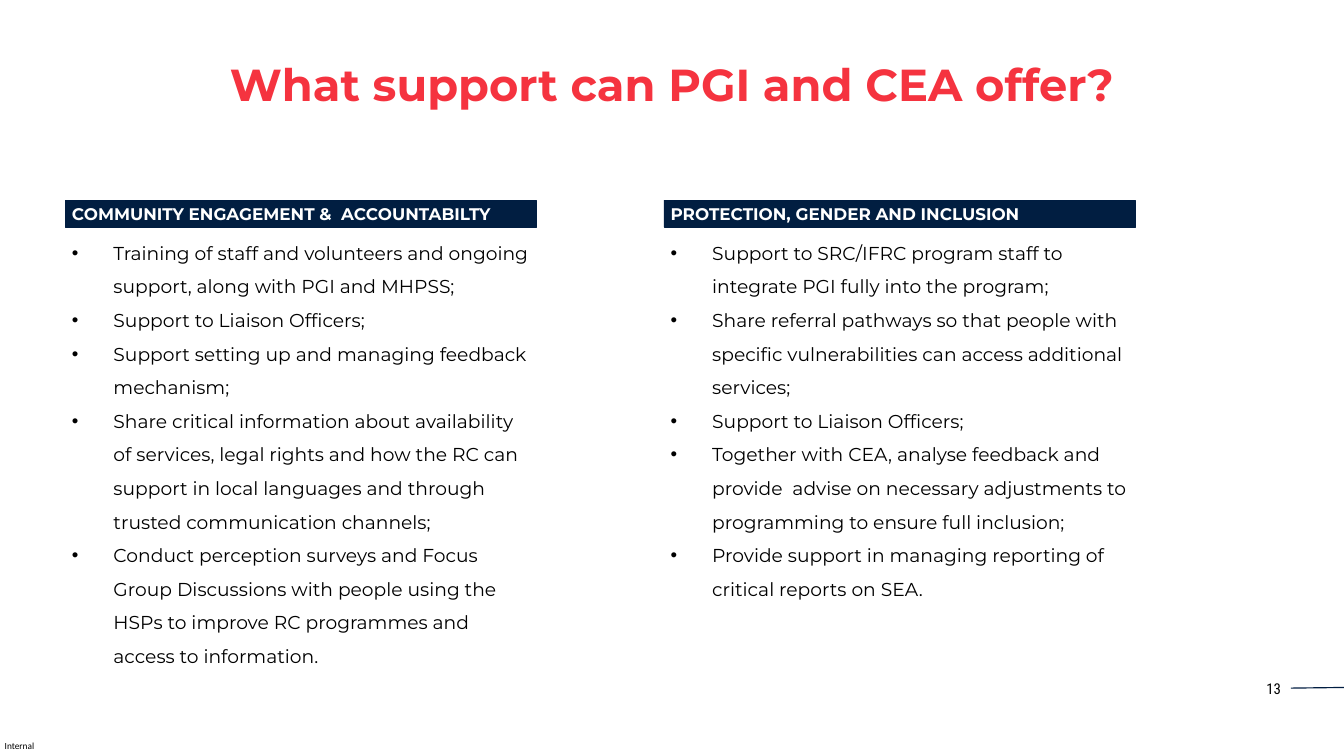
from lxml import etree
from pptx import Presentation
from pptx.dml.color import RGBColor
from pptx.enum.shapes import MSO_CONNECTOR, MSO_SHAPE
from pptx.enum.text import MSO_ANCHOR, PP_ALIGN
from pptx.oxml.ns import qn
from pptx.util import Pt

RECTANGLE = MSO_SHAPE.RECTANGLE
STRAIGHT = MSO_CONNECTOR.STRAIGHT
TOP, MIDDLE = MSO_ANCHOR.TOP, MSO_ANCHOR.MIDDLE
LEFT, CENTER, RIGHT = PP_ALIGN.LEFT, PP_ALIGN.CENTER, PP_ALIGN.RIGHT

# Content
TITLE = "What support can PGI and CEA offer?"
PAGE_NUMBER = "13"
CLASSIFICATION = "Internal"
COLUMNS = [
    ("COMMUNITY ENGAGEMENT &  ACCOUNTABILTY", [
        "Training of staff and volunteers and ongoing support, along with PGI and MHPSS;",
        "Support to Liaison Officers;",
        "Support setting up and managing feedback mechanism;",
        "Share critical information about availability of services, legal rights and how "
        "the RC can support in local languages and through trusted communication channels;",
        "Conduct perception surveys and Focus Group Discussions with people using the "
        "HSPs to improve RC programmes and access to information.",
    ]),
    ("PROTECTION, GENDER AND INCLUSION", [
        "Support to SRC/IFRC program staff to integrate PGI fully into the program;",
        "Share referral pathways so that people with specific vulnerabilities can access "
        "additional services;",
        "Support to Liaison Officers;",
        "Together with CEA, analyse feedback and provide  advise on necessary "
        "adjustments to programming to ensure full inclusion;",
        "Provide support in managing reporting of critical reports on SEA.",
    ]),
]

# Layout, in px at 100 px to the inch
PX = 9144
SLIDE_W, SLIDE_H = 2000, 1125
COLUMN_X, COLUMN_STEP, COLUMN_W = 97, 891, 701
HEADER_Y, HEADER_H = 298, 40
LIST_Y = HEADER_Y + HEADER_H
LINE_H = 50
INDENT = 62

HEADING_FONT = "Montserrat"
NAVY, NAVY_LINE, RED = "011E41", "001D41", "F5333F"
BLACK, WHITE = "000000", "FFFFFF"


def px(length):
    return length * PX


def rgb(value):
    return RGBColor.from_string(value)


def write(shape, lines, size, color, font=HEADING_FONT, bold=False,
          align=LEFT, anchor=TOP, bulleted=False):
    frame = shape.text_frame
    frame.word_wrap = True
    frame.vertical_anchor = anchor
    for i, line in enumerate(lines):
        paragraph = frame.paragraphs[0] if i == 0 else frame.add_paragraph()
        paragraph.text = line
        paragraph.alignment = align
        if bulleted:
            paragraph.line_spacing = 1.5
            add_bullet(paragraph)
        paragraph.font.name = font
        paragraph.font.size = Pt(size)
        paragraph.font.bold = bold
        paragraph.font.color.rgb = rgb(color)
    return frame


def add_bullet(paragraph):
    props = paragraph._p.get_or_add_pPr()
    props.set("marL", str(px(INDENT)))
    props.set("indent", str(-px(INDENT)))
    etree.SubElement(props, qn("a:buFont"), typeface="Arial")
    etree.SubElement(props, qn("a:buChar"), char="•")


def add_text(slide, box, lines, size, color, **style):
    return write(slide.shapes.add_textbox(*map(px, box)), lines, size, color, **style)


def add_column(slide, x, heading, points):
    list_h = 703 if len(points[3]) > 130 else 560
    add_text(slide, (x, LIST_Y, COLUMN_W, list_h), points, 20, BLACK, bulleted=True)
    header = slide.shapes.add_shape(
        RECTANGLE, *map(px, (x, HEADER_Y, COLUMN_W, HEADER_H)))
    header.shadow.inherit = False
    header.fill.solid()
    header.fill.fore_color.rgb = rgb(NAVY)
    header.line.color.rgb = rgb(NAVY_LINE)
    header.line.width = Pt(0.75)
    write(header, [heading], 18, WHITE, bold=True, anchor=MIDDLE)


def main():
    deck = Presentation()
    deck.slide_width, deck.slide_height = px(SLIDE_W), px(SLIDE_H)
    slide = deck.slides.add_slide(deck.slide_layouts[6])

    # Footer: classification, page number and rule
    label = add_text(slide, (7, 1102, 47, 17), [CLASSIFICATION], 10, BLACK, font="Calibri")
    label.margin_left = label.margin_right = label.margin_top = label.margin_bottom = 0
    add_text(slide, (1844, 1006, 72, 37), [PAGE_NUMBER], 16, BLACK,
             font="Roboto Condensed", align=RIGHT)
    rule = slide.shapes.add_connector(STRAIGHT, *map(px, (1921, 1024, SLIDE_W, 1023)))
    rule.line.color.rgb = rgb(NAVY_LINE)
    rule.line.width = Pt(1.25)
    etree.SubElement(rule._element.spPr, qn("a:effectLst"))

    # Title
    add_text(slide, (0, 80, SLIDE_W, 91), [TITLE], 48, RED, bold=True, align=CENTER)

    # Two columns of support
    for i, (heading, points) in enumerate(COLUMNS):
        add_column(slide, COLUMN_X + i * COLUMN_STEP, heading, points)

    deck.save("out.pptx")


if __name__ == "__main__":
    main()
